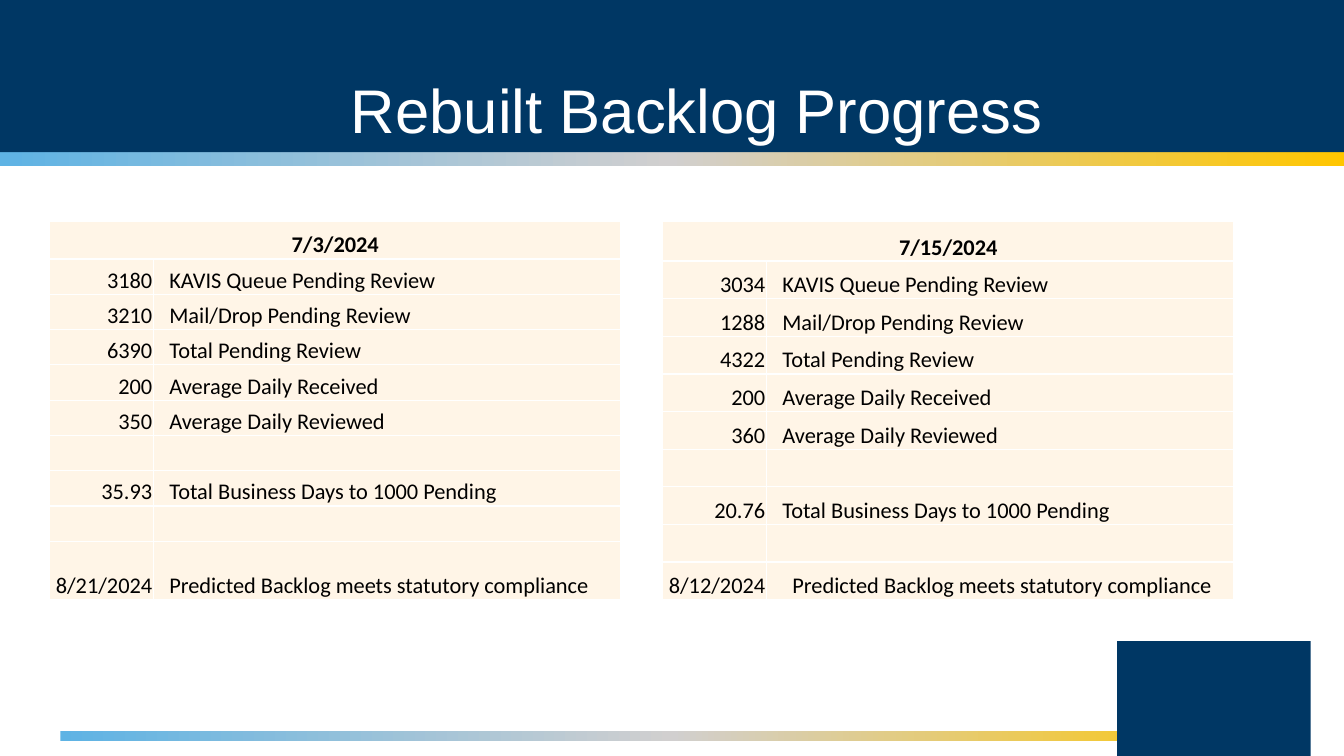
from copy import deepcopy

from lxml.etree import SubElement
from pptx import Presentation
from pptx.dml.color import RGBColor
from pptx.enum.shapes import MSO_SHAPE
from pptx.enum.text import MSO_ANCHOR, PP_ALIGN
from pptx.oxml.ns import qn
from pptx.util import Inches, Pt

NAVY = RGBColor(0x00, 0x37, 0x64)
SKY = RGBColor(0x5E, 0xB3, 0xE4)
SILVER = RGBColor(0xD1, 0xCF, 0xCF)
GOLD = RGBColor(0xFF, 0xC6, 0x00)
CREAM = RGBColor(0xFF, 0xF5, 0xE7)
WHITE = RGBColor(0xFF, 0xFF, 0xFF)
BLACK = RGBColor(0x00, 0x00, 0x00)

LABELS = [
    "KAVIS Queue Pending Review",
    "Mail/Drop Pending Review",
    "Total Pending Review",
    "Average Daily Received",
    "Average Daily Reviewed",
    "",
    "Total Business Days to 1000 Pending",
    "",
    "Predicted Backlog meets statutory compliance",
]
JULY_3 = ["3180", "3210", "6390", "200", "350", "", "35.93", "", "8/21/2024"]
JULY_15 = ["3034", "1288", "4322", "200", "360", "", "20.76", "", "8/12/2024"]


class BacklogSlide:
    """Draws the backlog slide's elements in one shared style."""

    def __init__(self, presentation):
        self.slide = presentation.slides.add_slide(presentation.slide_layouts[5])

    def rectangle(self, left, top, width, height):
        shape = self.slide.shapes.add_shape(
            MSO_SHAPE.RECTANGLE, Inches(left), Inches(top), Inches(width), Inches(height)
        )
        shape.shadow.inherit = False
        shape.line.fill.background()
        return shape

    def block(self, left, top, width, height):
        fill = self.rectangle(left, top, width, height).fill
        fill.solid()
        fill.fore_color.rgb = NAVY

    def gradient_band(self, left, top, width, height):
        shape = self.rectangle(left, top, width, height)
        shape.fill.gradient()
        shape.fill.gradient_angle = 0
        stop_list = next(shape.element.iter(qn("a:gsLst")))
        stop_list.append(deepcopy(stop_list[-1]))
        colors = (SKY, SILVER, GOLD)
        for stop, color, position in zip(shape.fill.gradient_stops, colors, (0, 0.5, 1)):
            stop.color.rgb = color
            stop.position = position

    def title(self, text):
        title = self.slide.shapes.title
        title.element.getparent().append(title.element)
        title.left, title.top = Inches(0), Inches(0)
        title.width, title.height = Inches(13.33), Inches(1.51)
        title.fill.solid()
        title.fill.fore_color.rgb = NAVY
        frame = title.text_frame
        frame.text = text
        frame.word_wrap = True
        frame.vertical_anchor = MSO_ANCHOR.BOTTOM
        frame.margin_left, frame.margin_right = Inches(0.6), Inches(0.1)
        frame.margin_top = frame.margin_bottom = Inches(0.05)
        paragraph = frame.paragraphs[0]
        paragraph.alignment = PP_ALIGN.CENTER
        paragraph.line_spacing = 0.9
        self.font(paragraph, "Arial", 44, WHITE)

    def font(self, paragraph, name, size, color, bold=False):
        font = paragraph.font
        font.name, font.size, font.bold = name, Pt(size), bold
        font.color.rgb = color

    def cell(self, cell, text, alignment, indent=0.01, bold=False):
        properties = cell._tc.get_or_add_tcPr()
        for side in ("a:lnL", "a:lnR", "a:lnT", "a:lnB"):
            line = SubElement(properties, qn(side), w=str(Pt(1)))
            fill = SubElement(line, qn("a:solidFill"))
            SubElement(fill, qn("a:srgbClr"), val=str(WHITE))
        cell.fill.solid()
        cell.fill.fore_color.rgb = CREAM
        cell.vertical_anchor = MSO_ANCHOR.BOTTOM
        cell.margin_left = Inches(indent)
        cell.margin_right = cell.margin_top = Inches(0.01)
        cell.margin_bottom = Inches(0)
        cell.text = text
        paragraph = cell.text_frame.paragraphs[0]
        paragraph.alignment = alignment
        self.font(paragraph, "Calibri", 16, BLACK, bold)

    def backlog_table(self, left, date, values, row_heights, last_indent):
        table = self.slide.shapes.add_table(
            len(row_heights), 2, Inches(left), Inches(2.2), Inches(5.67), Inches(3.75)
        ).table
        table.first_row = table.horz_banding = False
        table.columns[0].width, table.columns[1].width = Inches(1.03), Inches(4.64)
        for row, height in zip(table.rows, row_heights):
            row.height = Inches(height)
        table.cell(0, 0).merge(table.cell(0, 1))
        self.cell(table.cell(0, 0), date, PP_ALIGN.CENTER, bold=True)
        self.cell(table.cell(0, 1), "", PP_ALIGN.CENTER)
        for row, (value, label) in enumerate(zip(values, LABELS), start=1):
            indent = last_indent if row == len(LABELS) else 0.16
            self.cell(table.cell(row, 0), value, PP_ALIGN.RIGHT)
            self.cell(table.cell(row, 1), label, PP_ALIGN.LEFT, indent)


def main():
    presentation = Presentation()
    presentation.slide_width, presentation.slide_height = Inches(13.33), Inches(7.5)
    backlog = BacklogSlide(presentation)
    backlog.gradient_band(0.6, 7.25, 12.14, 0.1)
    backlog.block(11.08, 6.36, 1.92, 1.18)
    backlog.gradient_band(-0.02, 1.48, 13.35, 0.17)
    backlog.title("Rebuilt Backlog Progress")
    backlog.backlog_table(0.49, "7/3/2024", JULY_3, [0.37] + [0.35] * 8 + [0.58], 0.16)
    backlog.backlog_table(6.57, "7/15/2024", JULY_15, [0.39] + [3.36 / 9] * 9, 0.26)
    presentation.save("out.pptx")


if __name__ == "__main__":
    main()
